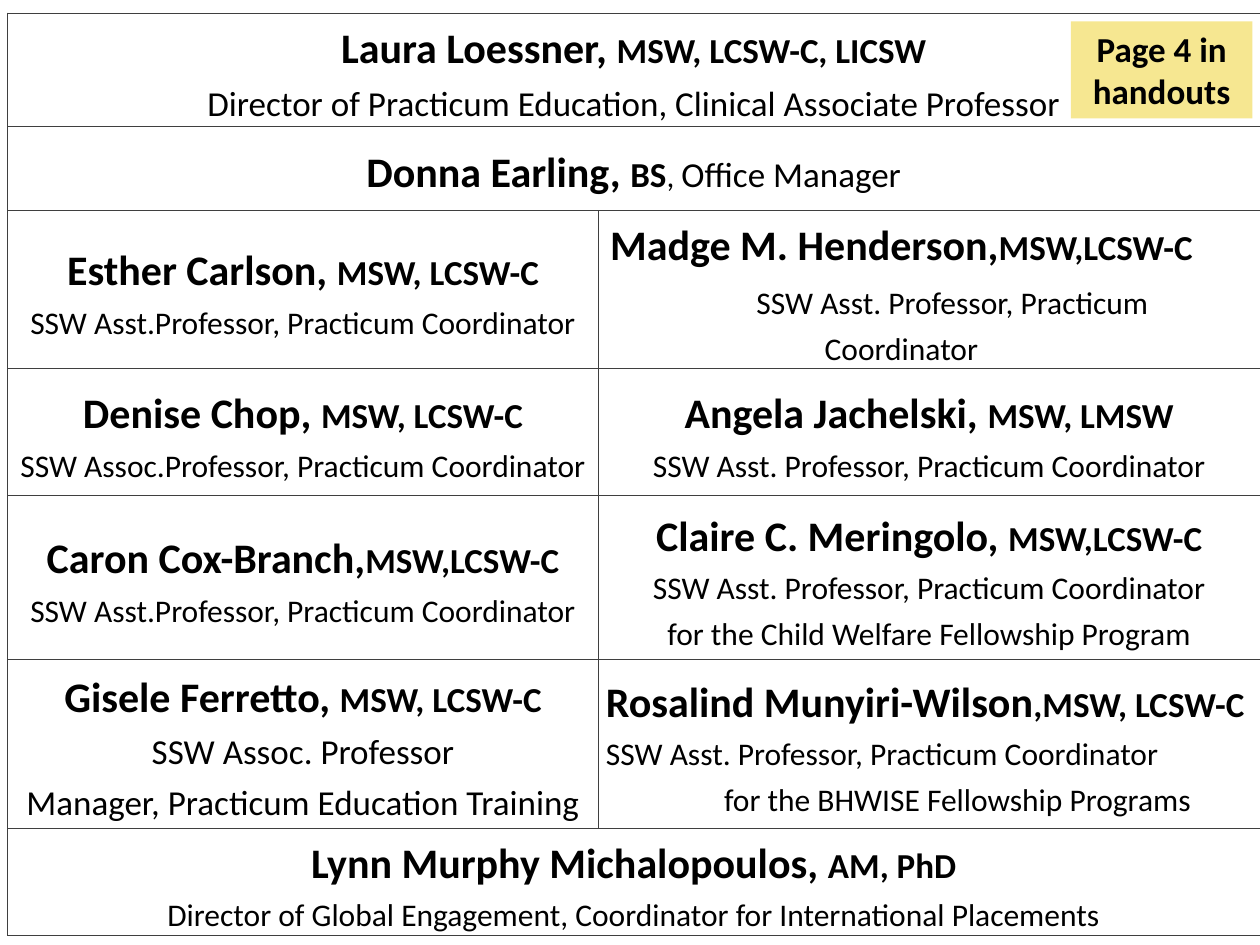
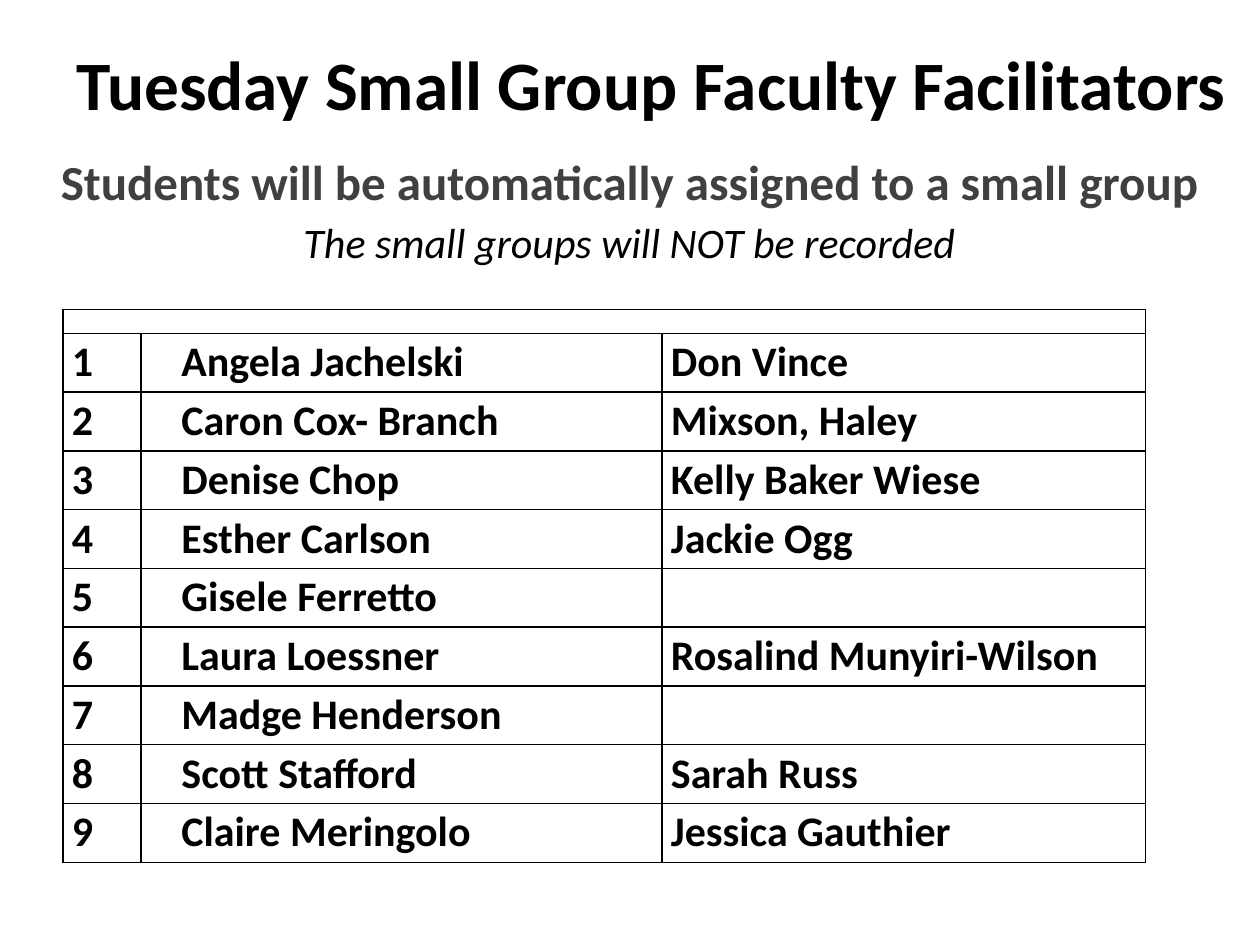
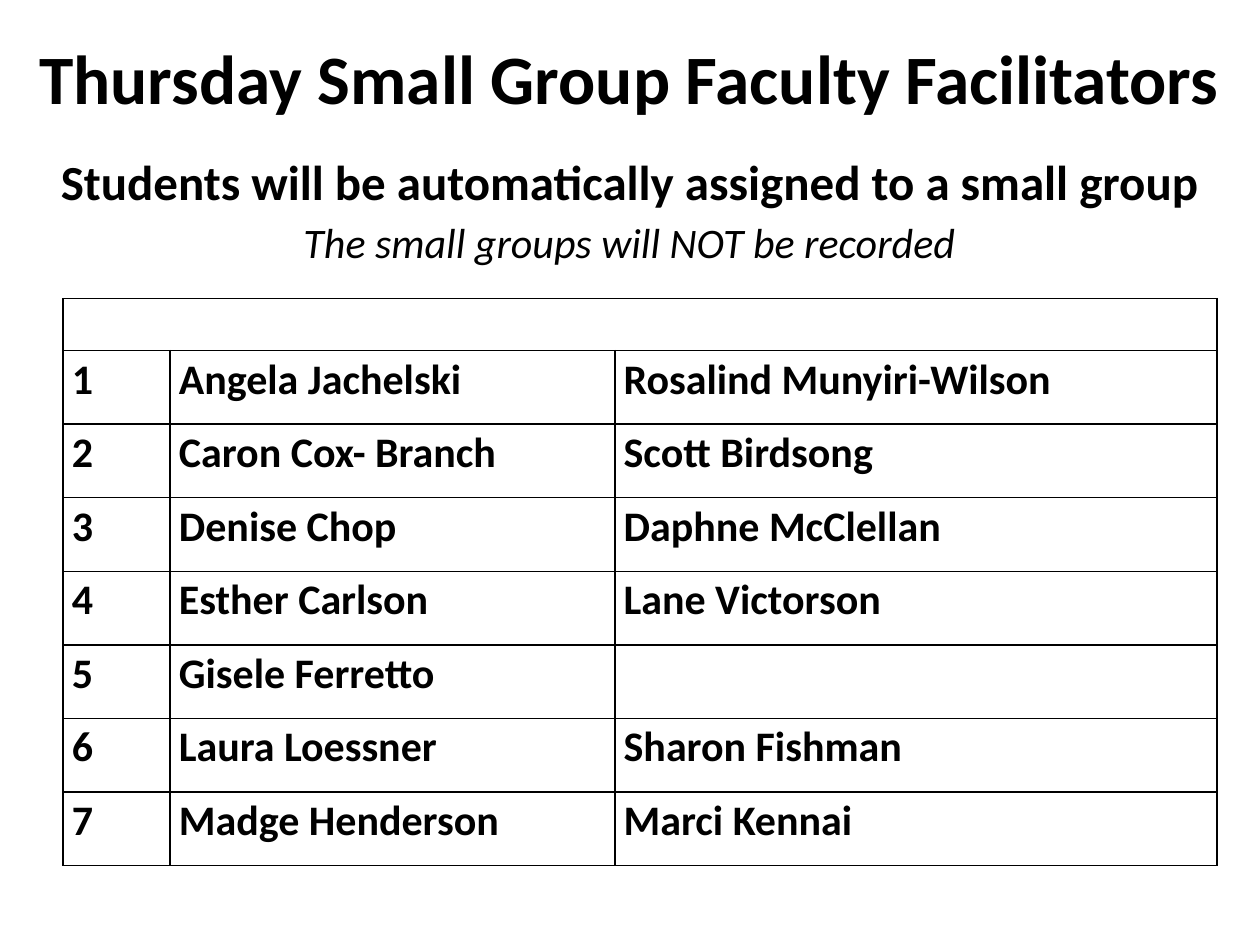
import pptx
import pptx.util
import pptx.dml.color
import pptx.enum.shapes
import pptx.enum.text
import pptx.oxml
import pptx.oxml.ns
import lxml.etree

FONT = "Calibri"
BLACK, WHITE, GREY = "000000", "FFFFFF", "404040"
RULE_GREY, NOTE_YELLOW = "3F3F3F", "F6E791"
CENTER = pptx.enum.text.PP_ALIGN.CENTER
LEFT = pptx.enum.text.PP_ALIGN.LEFT
MIDDLE = pptx.enum.text.MSO_ANCHOR.MIDDLE
TOP = pptx.enum.text.MSO_ANCHOR.TOP

deck = pptx.Presentation()
deck.slide_width = pptx.util.Inches(10)
deck.slide_height = pptx.util.Inches(7.5)


def color(code):
    return pptx.dml.color.RGBColor.from_string(code)


def place(left, top, width, height):
    """Turn percentages of the slide into a box."""
    return (round(deck.slide_width * left / 100), round(deck.slide_height * top / 100),
            round(deck.slide_width * width / 100), round(deck.slide_height * height / 100))


def write(para, text, size=24, bold=False, italic=False, ink=BLACK):
    span = para.add_run()
    span.text = text
    font = span.font
    font.name, font.size = FONT, pptx.util.Pt(size)
    font.bold, font.italic = bold, italic
    font.color.rgb = color(ink)


def shape_para(para, align=LEFT, spacing=None, before=0, indent=0, right=0):
    para.alignment = align
    if spacing:
        para.line_spacing = spacing
    if before:
        para.space_before = pptx.util.Pt(before)
    for side, inches in (("marL", indent), ("marR", right)):
        if inches:
            para._p.get_or_add_pPr().set(side, str(pptx.util.Inches(inches)))


def next_para(frame, index):
    return frame.add_paragraph() if index else frame.paragraphs[0]


def split(total, weights):
    return [round(total * weight / sum(weights)) for weight in weights]


def style_cell(cell, line_color, line_width, inset, anchor, fill=None):
    cell.margin_left = cell.margin_right = pptx.util.Inches(inset)
    cell.margin_top = cell.margin_bottom = 0
    cell.vertical_anchor = anchor
    properties = cell._tc.get_or_add_tcPr()
    for side in ("lnL", "lnR", "lnT", "lnB"):
        line = lxml.etree.SubElement(properties, pptx.oxml.ns.qn("a:" + side),
                                     w=str(pptx.util.Pt(line_width)))
        solid = lxml.etree.SubElement(line, pptx.oxml.ns.qn("a:solidFill"))
        lxml.etree.SubElement(solid, pptx.oxml.ns.qn("a:srgbClr"), val=line_color)
    if fill:
        cell.fill.solid()
        cell.fill.fore_color.rgb = color(fill)
    else:
        cell.fill.background()


def add_grid(page, box, columns, rows, **cell_format):
    """Add a plain ruled table whose columns and rows share the box by weight."""
    table = page.shapes.add_table(len(rows), len(columns), *box).table
    table.first_row = table.horz_banding = False
    for column, width in zip(table.columns, split(box[2], columns)):
        column.width = width
    for row, height in zip(table.rows, split(box[3], rows)):
        row.height = height
    for cell in table.iter_cells():
        style_cell(cell, **cell_format)
    return table


# Staff directory: name, credentials, then lines as (text, size, paragraph format)
def role(text, size=18, **layout):
    return text, size, layout


ASSISTANT = "SSW Asst. Professor, Practicum Coordinator"
ASSISTANT_TIGHT = "SSW Asst.Professor, Practicum Coordinator"
STAFF = [
    [("Laura Loessner, ", "MSW, LCSW-C, LICSW",
      [role("Director of Practicum Education, Clinical Associate Professor", 20)], {})],
    [("Donna Earling, ", "BS", [], {})],
    [("Esther Carlson, ", "MSW, LCSW-C", [role(ASSISTANT_TIGHT)], {}),
     ("Madge M. Henderson,", "MSW,LCSW-C",
      [role("SSW Asst. Professor, Practicum", indent=0.81, before=3), role("Coordinator")],
      {"right": 0.44})],
    [("Denise Chop, ", "MSW, LCSW-C", [role("SSW Assoc.Professor, Practicum Coordinator")], {}),
     ("Angela Jachelski, ", "MSW, LMSW", [role(ASSISTANT)], {})],
    [("Caron Cox-Branch,", "MSW,LCSW-C", [role(ASSISTANT_TIGHT)], {}),
     ("Claire C. Meringolo, ", "MSW,LCSW-C",
      [role(ASSISTANT), role("for the Child Welfare Fellowship Program")], {})],
    [("Gisele Ferretto, ", "MSW, LCSW-C",
      [role("SSW Assoc. Professor", 20), role("Manager, Practicum Education Training", 20)], {}),
     ("Rosalind Munyiri-Wilson", ",MSW, LCSW-C",
      [role(ASSISTANT, align=LEFT), role("for the BHWISE Fellowship Programs", indent=0.45)],
      {"align": LEFT})],
    [("Lynn Murphy Michalopoulos, ", "AM, PhD",
      [role("Director of Global Engagement, Coordinator for International Placements")], {})],
]


def fill_person(cell, name, credentials, roles, layout):
    frame = cell.text_frame
    heading = frame.paragraphs[0]
    shape_para(heading, **{"align": CENTER, "spacing": 1.19, **layout})
    write(heading, name, bold=True)
    write(heading, credentials, size=20, bold=True)
    for text, size, role_layout in roles:
        para = frame.add_paragraph()
        shape_para(para, **{"align": CENTER, "spacing": 1.19, **role_layout})
        write(para, text, size=size)


def add_note(page, box, text):
    note = page.shapes.add_shape(pptx.enum.shapes.MSO_SHAPE.RECTANGLE, *box)
    note.shadow.inherit = False
    note.fill.solid()
    note.fill.fore_color.rgb = color(NOTE_YELLOW)
    note.line.fill.background()
    note.text_frame.word_wrap = True
    para = note.text_frame.paragraphs[0]
    shape_para(para, align=CENTER)
    write(para, text, size=20, bold=True)


def add_directory():
    page = deck.slides.add_slide(deck.slide_layouts[6])
    table = add_grid(page, place(0.6, 1.37, 99.4, 97.6), (4.69, 5.25),
                     (0.9, 0.67, 1.25, 1.01, 1.3, 1.34, 0.85),
                     line_color=RULE_GREY, line_width=0.5, inset=0.06, anchor=MIDDLE, fill=WHITE)
    for index, people in enumerate(STAFF):
        if len(people) == 1:
            table.cell(index, 0).merge(table.cell(index, 1))
        for column, person in enumerate(people):
            fill_person(table.cell(index, column), *person)
    # The office manager's role continues on the name line
    manager = table.cell(1, 0).text_frame.paragraphs[0]
    write(manager, ", ", size=18)
    write(manager, "Office Manager", size=20)
    add_note(page, place(85, 2.27, 14.4, 10.27), "Page 4 in handouts")


# Facilitator slides
def add_title(page, box, text):
    title = page.shapes.title
    title.left, title.top, title.width, title.height = box
    frame = title.text_frame
    frame.word_wrap = True
    frame.auto_size = pptx.enum.text.MSO_AUTO_SIZE.NONE
    frame.vertical_anchor = MIDDLE
    shape_para(frame.paragraphs[0], align=CENTER)
    write(frame.paragraphs[0], text, size=39.6, bold=True)


def add_announcement(page, box, ink):
    frame = page.shapes.add_textbox(*box).text_frame
    frame.word_wrap = True
    lines = [("Students will be automatically assigned to a small group",
              {"size": 28, "bold": True, "ink": ink}),
             ("The small groups will NOT be recorded", {"italic": True})]
    for index, (text, style) in enumerate(lines):
        para = next_para(frame, index)
        shape_para(para, align=CENTER, before=4 * index)
        write(para, text, **style)


def add_facilitators(day, title_box, ink, pairs, table_box, columns, header, row, indent=0):
    page = deck.slides.add_slide(deck.slide_layouts[5])
    add_title(page, title_box, f"{day} Small Group Faculty Facilitators")
    add_announcement(page, place(0.8, 15.33, 98.3, 82.4), ink)
    table = add_grid(page, table_box, columns, [header] + [row] * len(pairs),
                     line_color=BLACK, line_width=1, inset=0.07, anchor=TOP)
    # Empty heading row across all columns
    table.cell(0, 0).merge(table.cell(0, 2))
    for column in range(3):
        blank = table.cell(0, column).text_frame.paragraphs[0]
        blank._p.get_or_add_endParaRPr().set("sz", "800")
    # Numbered pairs
    for number, pair in enumerate(pairs, start=1):
        for column, text in enumerate((str(number), *pair)):
            if text:
                para = table.cell(number, column).text_frame.paragraphs[0]
                shape_para(para, spacing=1.07, indent=indent if column == 1 else 0)
                write(para, text, bold=True)


TUESDAY = [
    ("Angela Jachelski", "Don Vince"),
    ("Caron Cox- Branch", "Mixson, Haley"),
    ("Denise Chop", "Kelly Baker Wiese"),
    ("Esther Carlson", "Jackie Ogg"),
    ("Gisele Ferretto", ""),
    ("Laura Loessner", "Rosalind Munyiri-Wilson"),
    ("Madge Henderson", ""),
    ("Scott Stafford", "Sarah Russ"),
    ("Claire Meringolo", "Jessica Gauthier"),
]
THURSDAY = [
    ("Angela Jachelski", "Rosalind Munyiri-Wilson"),
    ("Caron Cox- Branch", "Scott Birdsong"),
    ("Denise Chop", "Daphne McClellan"),
    ("Esther Carlson", "Lane Victorson"),
    ("Gisele Ferretto", ""),
    ("Laura Loessner", "Sharon Fishman"),
    ("Madge Henderson", "Marci Kennai"),
]


def main():
    add_directory()
    add_facilitators("Tuesday", place(4.2, 2, 95, 13.6), GREY, TUESDAY,
                     place(5, 32.75, 85.9, 58.5), (0.62, 4.13, 3.83),
                     header=0.19, row=0.47, indent=0.25)
    add_facilitators("Thursday", place(0.8, 1.33, 98.3, 13.6), BLACK, THURSDAY,
                     place(5, 31.6, 91.6, 60), (0.85, 3.53, 4.78),
                     header=0.41, row=0.58)
    deck.save("out.pptx")


if __name__ == "__main__":
    main()
